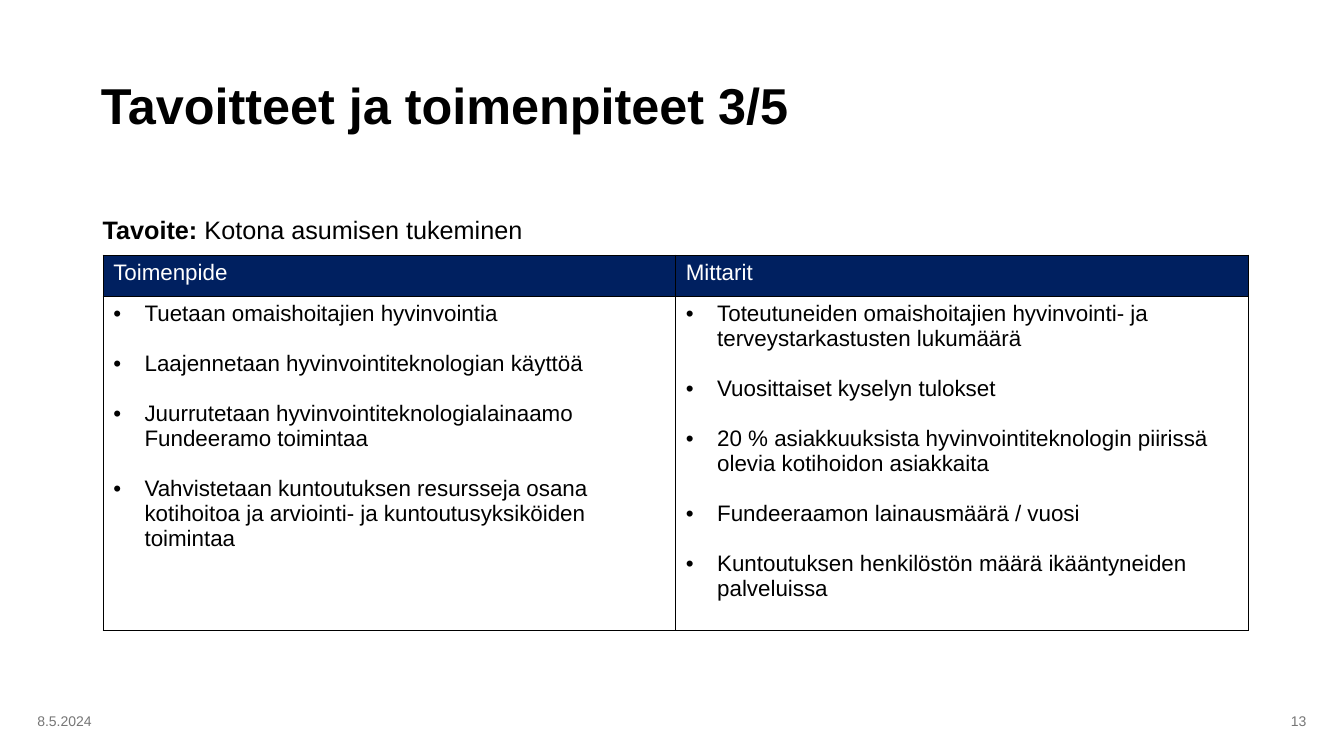
from pptx import Presentation
from pptx.dml.color import RGBColor
from pptx.enum.text import MSO_ANCHOR as Anchor, MSO_AUTO_SIZE as AutoSize, PP_ALIGN as Align
from pptx.oxml import parse_xml
from pptx.oxml.ns import nsdecls
from pptx.util import Cm, Pt

BLACK = RGBColor(0x00, 0x00, 0x00)
WHITE = RGBColor(0xFF, 0xFF, 0xFF)
NAVY = RGBColor(0x00, 0x20, 0x60)
GREY = RGBColor(0x76, 0x76, 0x76)

TITLE_ONLY = 5
COLUMN_WIDTH = 14.43
HEADER_HEIGHT = 1.04
BODY_HEIGHT = 8.41

COLUMNS = {
    "Toimenpide": [
        "Tuetaan omaishoitajien hyvinvointia",
        "Laajennetaan hyvinvointiteknologian käyttöä",
        "Juurrutetaan hyvinvointiteknologialainaamo Fundeeramo toimintaa",
        "Vahvistetaan kuntoutuksen resursseja osana kotihoitoa ja arviointi- ja "
        "kuntoutusyksiköiden toimintaa",
    ],
    "Mittarit": [
        "Toteutuneiden omaishoitajien hyvinvointi- ja terveystarkastusten lukumäärä",
        "Vuosittaiset kyselyn tulokset",
        "20 % asiakkuuksista hyvinvointiteknologin piirissä olevia kotihoidon asiakkaita",
        "Fundeeraamon lainausmäärä / vuosi",
        "Kuntoutuksen henkilöstön määrä ikääntyneiden palveluissa",
    ],
}


class SlideBuilder:
    def __init__(self, page, font_name="Arial"):
        self.page = page
        self.font_name = font_name

    def style(self, font, size, color, bold=False):
        font.name = self.font_name
        font.size = Pt(size)
        font.bold = bold
        font.color.rgb = color

    def title(self, text, left, top, width, height):
        box = self.page.shapes.title
        box.left, box.top, box.width, box.height = map(Cm, (left, top, width, height))
        frame = box.text_frame
        frame.text = text
        frame.auto_size = AutoSize.NONE
        frame.vertical_anchor = Anchor.MIDDLE
        frame.margin_left = frame.margin_right = Cm(0.2)
        frame.margin_top = frame.margin_bottom = Cm(0.1)
        para = frame.paragraphs[0]
        para.alignment = Align.LEFT
        para.line_spacing = 0.9
        self.style(para.font, 36, BLACK, bold=True)

    def text(self, parts, left, top, width, height, size, color,
             align=Align.LEFT, anchor=Anchor.TOP):
        """Add a one-line box from (text, bold) parts."""
        box = self.page.shapes.add_textbox(Cm(left), Cm(top), Cm(width), Cm(height))
        frame = box.text_frame
        frame.word_wrap = True
        frame.vertical_anchor = anchor
        para = frame.paragraphs[0]
        para.alignment = align
        for words, bold in parts:
            span = para.add_run()
            span.text = words
            self.style(span.font, size, color, bold)

    def border(self, cell):
        properties = cell._tc.get_or_add_tcPr()
        for side in "LRTB":
            properties.append(parse_xml(
                f'<a:ln{side} {nsdecls("a")} w="{Pt(1)}"><a:solidFill>'
                f'<a:srgbClr val="{BLACK}"/></a:solidFill></a:ln{side}>'))

    def bullet(self, para):
        properties = para._p.get_or_add_pPr()
        properties.set("marL", str(Cm(0.79)))
        properties.set("indent", str(-Cm(0.79)))
        properties.append(parse_xml(f'<a:buFont {nsdecls("a")} typeface="{self.font_name}"/>'))
        properties.append(parse_xml(f'<a:buChar {nsdecls("a")} char="•"/>'))

    def table(self, columns, left, top):
        frame = self.page.shapes.add_table(
            2, len(columns), Cm(left), Cm(top),
            Cm(COLUMN_WIDTH * len(columns)), Cm(HEADER_HEIGHT + BODY_HEIGHT))
        table = frame.table
        table.rows[0].height = Cm(HEADER_HEIGHT)
        table.rows[1].height = Cm(BODY_HEIGHT)
        for index, (heading, items) in enumerate(columns.items()):
            table.columns[index].width = Cm(COLUMN_WIDTH)
            header, body = table.cell(0, index), table.cell(1, index)
            self.border(header)
            header.fill.solid()
            header.fill.fore_color.rgb = NAVY
            header.text = heading
            self.style(header.text_frame.paragraphs[0].font, 16, WHITE)
            self.border(body)
            body.fill.background()
            body.text = "\n".join(items)
            for number, para in enumerate(body.text_frame.paragraphs):
                self.bullet(para)
                if number:
                    para.space_before = Pt(18)
                self.style(para.font, 16, BLACK)


def main():
    deck = Presentation()
    deck.slide_width, deck.slide_height = Cm(33.87), Cm(19.05)
    page = deck.slides.add_slide(deck.slide_layouts[TITLE_ONLY])
    builder = SlideBuilder(page)
    builder.title("Tavoitteet ja toimenpiteet 3/5", 2.34, 1.02, 28, 3.43)
    builder.table(COLUMNS, 2.6, 6.43)
    builder.text([("Tavoite: ", True), ("Kotona asumisen tukeminen", False)],
                 2.34, 5.28, 22.7, 1.02, 18, BLACK)
    builder.text([("8.5.2024", False)], 0.69, 17.65, 3.81, 1.02, 10, GREY,
                 anchor=Anchor.MIDDLE)
    builder.text([("13", False)], 25.55, 17.65, 7.62, 1.02, 10, GREY,
                 Align.RIGHT, Anchor.MIDDLE)
    deck.save("out.pptx")


if __name__ == "__main__":
    main()
